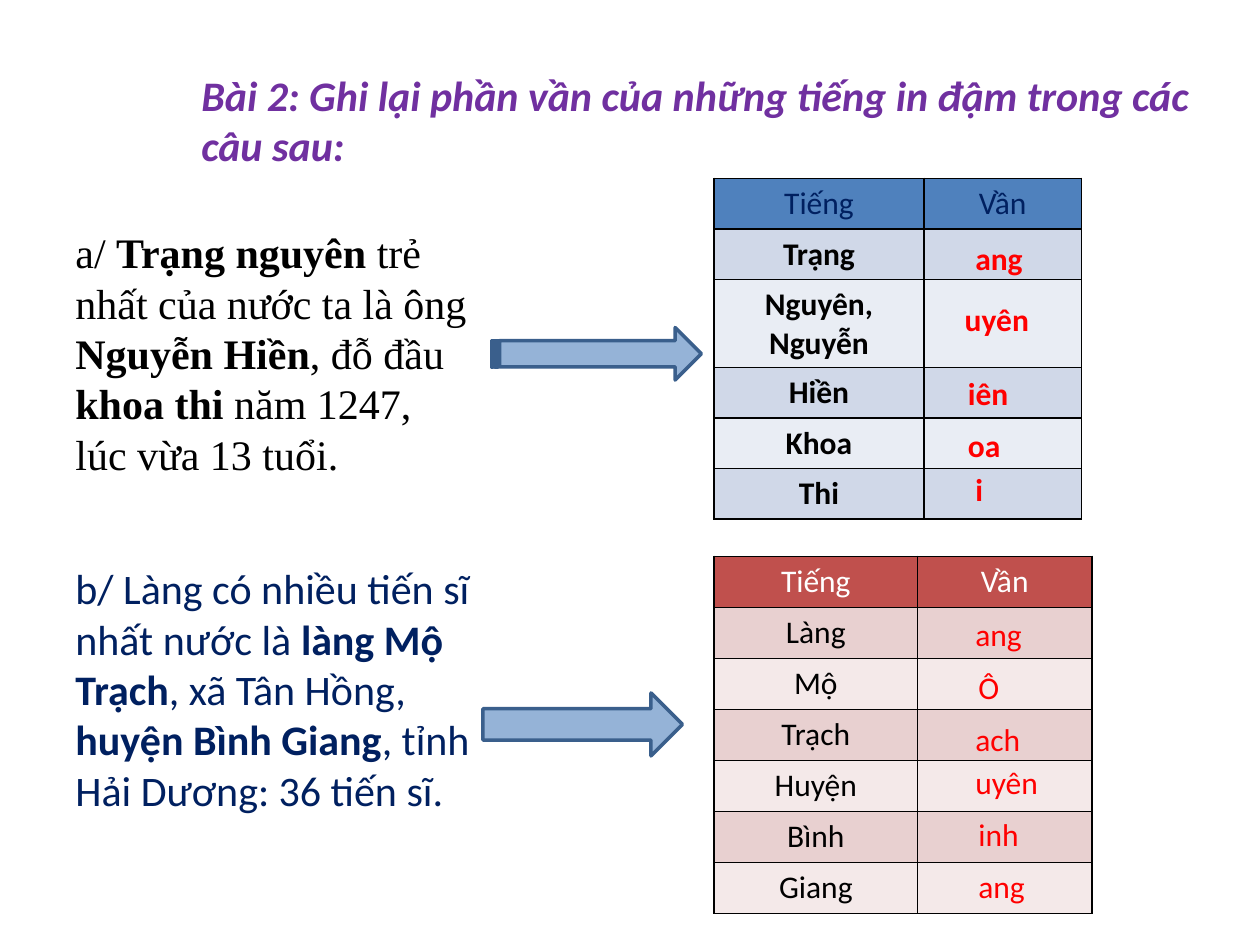
from lxml.etree import SubElement
from pptx import Presentation
from pptx.dml.color import RGBColor
from pptx.enum.shapes import MSO_SHAPE as SHAPE
from pptx.enum.text import MSO_ANCHOR as ANCHOR, MSO_AUTO_SIZE as FIT, PP_ALIGN as ALIGN
from pptx.oxml.ns import qn
from pptx.util import Inches, Pt

COLS, ROWS = 120, 90
WIDTH, HEIGHT = Inches(10), Inches(7.5)
RED, NAVY, BLACK, WHITE = "FF0000", "002060", "000000", "FFFFFF"

TITLE = "Bài 2: Ghi lại phần vần của những tiếng in đậm trong các câu sau:"
SENTENCE_A = [("a/ ", False), ("Trạng nguyên ", True), ("trẻ nhất của nước ta là ông ", False),
              ("Nguyễn Hiền", True), (", đỗ đầu ", False), ("khoa thi ", True),
              ("năm 1247, lúc vừa 13 tuổi.", False)]
SENTENCE_B = [("b/ Làng có nhiều tiến sĩ nhất nước là ", False), ("làng Mộ Trạch", True),
              (", xã Tân Hồng, ", False), ("huyện Bình Giang", True),
              (", tỉnh Hải Dương: 36 tiến sĩ.", False)]
WORDS_A = ["Trạng", "Nguyên, Nguyễn", "Hiền", "Khoa", "Thi"]
WORDS_B = ["Làng", "Mộ", "Trạch", "Huyện", "Bình", "Giang"]
RHYMES_A = [("ang", 91.7, 22.2), ("uyên", 90.7, 28), ("iên", 91, 35),
            ("oa", 91, 40), ("i", 91.7, 44.2)]
RHYMES_B = [("ang", 91.7, 58), ("Ô", 92, 63), ("ach", 91.7, 68),
            ("uyên", 91.7, 72.1), ("inh", 92, 77), ("ang", 92, 82)]


def rgb(value):
    """Turn a hex string into a colour."""
    return RGBColor.from_string(value)


def grid(*values):
    """Turn alternating column and row counts into slide lengths."""
    units = (WIDTH / COLS, HEIGHT / ROWS)
    return [round(v * units[i % 2]) for i, v in enumerate(values)]


def style(r, size, color, bold=False, italic=False, font="Calibri"):
    """Format one run."""
    r.font.name, r.font.size = font, Pt(size)
    r.font.bold, r.font.italic = bold, italic
    r.font.color.rgb = rgb(color)


def add_text(slide, box, parts, size, color, italic=False, font="Calibri"):
    """Add a wrapped text box made of (text, bold) parts."""
    tf = slide.shapes.add_textbox(*grid(*box)).text_frame
    tf.word_wrap, tf.auto_size = True, FIT.SHAPE_TO_FIT_TEXT
    for text, bold in parts:
        r = tf.paragraphs[0].add_run()
        r.text = text
        style(r, size, color, bold, italic, font)


def add_arrow(slide, kind, box):
    """Add a block arrow from a sentence to its table."""
    sp = slide.shapes.add_shape(kind, *grid(*box))
    sp.shadow.inherit = False
    sp.fill.solid()
    sp.fill.fore_color.rgb = rgb("95B3D7")
    sp.line.color.rgb = rgb("3A5F8C")
    sp.line.width = Pt(2)


def set_borders(cell):
    """Draw a thin black line on every side of a cell."""
    props = cell._tc.get_or_add_tcPr()
    for side in ("lnL", "lnR", "lnT", "lnB"):
        ln = SubElement(props, qn(f"a:{side}"), w=str(Pt(1)))
        SubElement(SubElement(ln, qn("a:solidFill")), qn("a:srgbClr"), val=BLACK)


def fill_cell(cell, text, fill, color, bold):
    """Set the text, border and fill of a table cell."""
    set_borders(cell)
    cell.fill.solid()
    cell.fill.fore_color.rgb = rgb(fill)
    cell.vertical_anchor = ANCHOR.TOP
    p = cell.text_frame.paragraphs[0]
    p.text, p.alignment = text, ALIGN.CENTER
    for r in p.runs:
        style(r, 18, color, bold)


def add_word_table(slide, top, widths, heights, words, fills, head_color, bold):
    """Add a two-column table with a header and banded word rows."""
    box = grid(68, top, sum(widths), sum(heights))
    table = slide.shapes.add_table(len(heights), 2, *box).table
    for column, width in zip(table.columns, widths):
        column.width = grid(width)[0]
    for row, height in zip(table.rows, heights):
        row.height = grid(0, height)[1]
    head, *bands = fills
    for i, texts in enumerate([("Tiếng", "Vần")] + [(word, "") for word in words]):
        fill = bands[(i - 1) % 2] if i else head
        color = BLACK if i else head_color
        for j, text in enumerate(texts):
            fill_cell(table.cell(i, j), text, fill, color, bold and i > 0)


def add_rhymes(slide, rhymes, bold):
    """Place the red answers over the second column."""
    for text, left, top in rhymes:
        add_text(slide, (left, top, 10, 4.8), [(text, bold)], 18, RED)


def main():
    """Build and save the slide."""
    prs = Presentation()
    prs.slide_width, prs.slide_height = WIDTH, HEIGHT
    slide = prs.slides.add_slide(prs.slide_layouts[6])
    add_text(slide, (18, 6, 97, 10.9), [(TITLE, True)], 24, "7030A0", italic=True)
    add_text(slide, (6, 21, 40, 25.4), SENTENCE_A, 24, BLACK, font="Times New Roman")
    add_text(slide, (6, 53, 40, 30.2), SENTENCE_B, 24, NAVY)
    add_word_table(slide, 17, (20, 15), [4.8, 4.8, 8.4, 4.8, 4.8, 4.8], WORDS_A,
                   ("4F81BD", "D0D8E8", "E9EDF4"), NAVY, True)
    add_arrow(slide, SHAPE.STRIPED_RIGHT_ARROW, (46.8, 31.2, 20, 5))
    add_word_table(slide, 53, (19.4, 16.6), [4.86] * 7, WORDS_B,
                   ("C0504D", "E8D0D0", "F4E9E9"), WHITE, False)
    add_arrow(slide, SHAPE.RIGHT_ARROW, (46, 66, 19, 6))
    add_rhymes(slide, RHYMES_A, True)
    add_rhymes(slide, RHYMES_B, False)
    prs.save("out.pptx")


if __name__ == "__main__":
    main()
